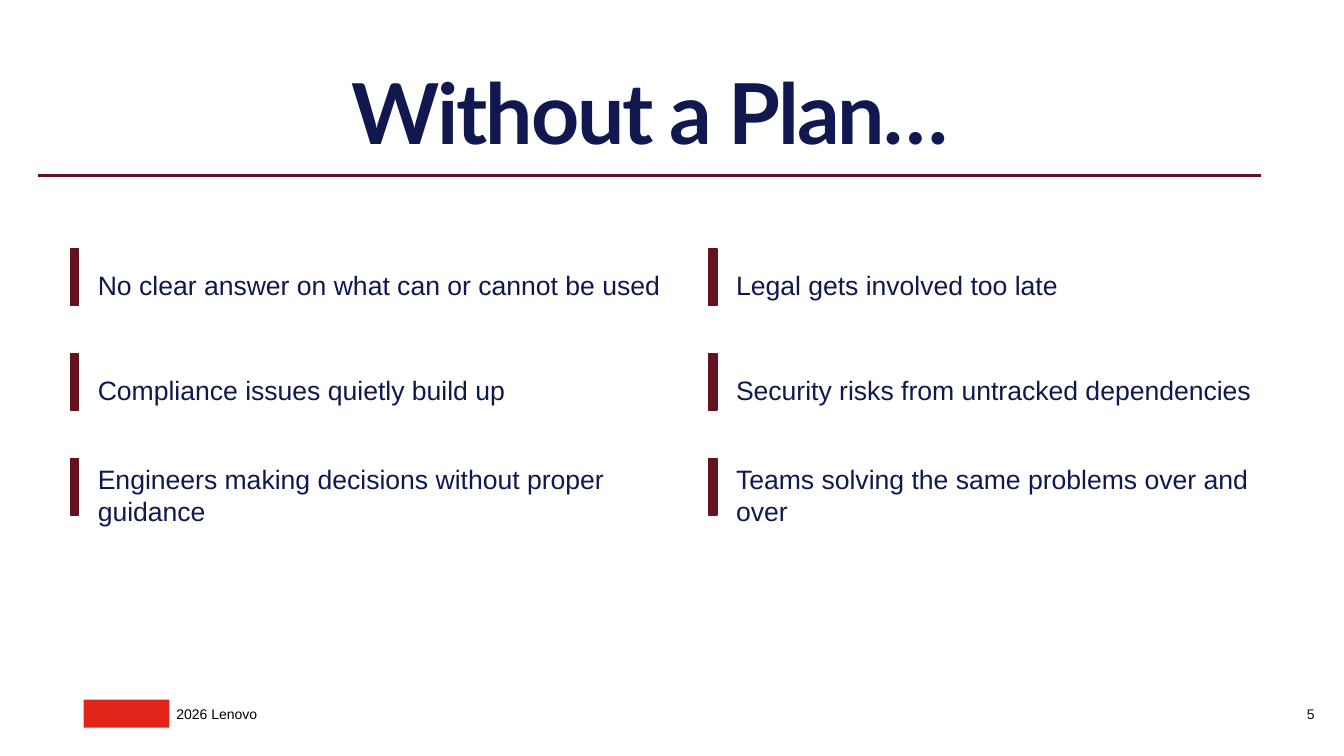
from pptx import Presentation
from pptx.dml.color import RGBColor
from pptx.enum.shapes import MSO_CONNECTOR, MSO_SHAPE
from pptx.enum.text import MSO_ANCHOR, MSO_AUTO_SIZE, PP_ALIGN
from pptx.oxml.ns import qn
from pptx.util import Inches, Pt
from lxml import etree

RECTANGLE = MSO_SHAPE.RECTANGLE
STRAIGHT = MSO_CONNECTOR.STRAIGHT
TOP, MIDDLE, BOTTOM = MSO_ANCHOR.TOP, MSO_ANCHOR.MIDDLE, MSO_ANCHOR.BOTTOM
LEFT, CENTER = PP_ALIGN.LEFT, PP_ALIGN.CENTER
NO_AUTOSIZE = MSO_AUTO_SIZE.NONE

NAVY = RGBColor(0x11, 0x18, 0x4F)
MAROON = RGBColor(0x64, 0x13, 0x1E)
RED = RGBColor(0xE1, 0x25, 0x1B)
BLACK = RGBColor(0x00, 0x00, 0x00)
NEAR_BLACK = RGBColor(0x0D, 0x0D, 0x0D)

TITLE_ONLY = 5
COLUMN_LEFTS = (0.7, 7.03)
FIRST_ROW_TOP, ROW_STEP = 2.47, 1.04
RISKS = (
    (
        "No clear answer on what can or cannot be used",
        "Compliance issues quietly build up",
        "Engineers making decisions without proper guidance",
    ),
    (
        "Legal gets involved too late",
        "Security risks from untracked dependencies",
        "Teams solving the same problems over and over",
    ),
)


class SlideBuilder:
    """Holds the text style and the slide being built."""

    frame_format = {
        "margin_left": 0, "margin_top": 0, "margin_right": 0,
        "margin_bottom": 0, "word_wrap": True, "auto_size": NO_AUTOSIZE,
    }
    body_font = {"name": "Arial", "size": Pt(19), "color": NAVY}
    small_font = {"name": "Arial", "size": Pt(10), "color": BLACK}
    title_font = {"name": "Lato", "size": Pt(60), "bold": True, "color": NAVY}

    def __init__(self, slide):
        self.slide = slide

    def fill_text(self, shape, text, font, anchor, alignment):
        frame = shape.text_frame
        for name, value in self.frame_format.items():
            setattr(frame, name, value)
        frame.vertical_anchor = anchor
        paragraph = frame.paragraphs[0]
        paragraph.alignment = alignment
        run = paragraph.add_run()
        run.text = text
        for name, value in font.items():
            if name == "color":
                run.font.color.rgb = value
            else:
                setattr(run.font, name, value)
        return paragraph

    def title(self, text, left, top, width, height):
        shape = self.slide.shapes.title
        box = {"left": left, "top": top, "width": width, "height": height}
        for name, value in box.items():
            setattr(shape, name, Inches(value))
        paragraph = self.fill_text(shape, text, self.title_font, BOTTOM, CENTER)
        paragraph.line_spacing = 0.75
        # Letter spacing in hundredths of a point
        paragraph.runs[0].font._element.set("spc", "-150")

    def text(self, text, left, top, width, height, font=None,
             anchor=MIDDLE, alignment=LEFT):
        shape = self.slide.shapes.add_textbox(
            Inches(left), Inches(top), Inches(width), Inches(height))
        self.fill_text(shape, text, font or self.body_font, anchor, alignment)

    def bar(self, left, top, width, height, color, outlined=True):
        shape = self.slide.shapes.add_shape(
            RECTANGLE, Inches(left), Inches(top), Inches(width), Inches(height))
        shape.shadow.inherit = False
        shape.fill.solid()
        shape.fill.fore_color.rgb = color
        if outlined:
            shape.line.color.rgb = color
            shape.line.width = Pt(1)
        else:
            shape.line.fill.background()

    def rule(self, left, right, top, color):
        connector = self.slide.shapes.add_connector(
            STRAIGHT, Inches(left), Inches(top), Inches(right), Inches(top))
        connector.line.color.rgb = color
        connector.line.width = Pt(2)
        etree.SubElement(connector._element.spPr, qn("a:effectLst"))

    def risk(self, text, left, top):
        self.bar(left, top, 0.08, 0.56, MAROON)
        self.text(text, left + 0.27, top - 0.16, 5.65, 1.04)


def main():
    presentation = Presentation()
    presentation.slide_width = Inches(13.33)
    presentation.slide_height = Inches(7.5)
    layout = presentation.slide_layouts[TITLE_ONLY]
    builder = SlideBuilder(presentation.slides.add_slide(layout))

    # Footer
    builder.text("2026 Lenovo", 1.75, 7, 4.5, 0.17, builder.small_font, TOP)
    builder.bar(0.83, 6.94, 0.85, 0.28, RED, outlined=False)
    builder.text("5", 12.76, 7, 0.48, 0.17,
                 {**builder.small_font, "color": NEAR_BLACK}, MIDDLE, CENTER)

    # Title and rule
    builder.title("Without a Plan…", 1.18, 0.46, 10.53, 1.12)
    builder.rule(0.38, 12.51, 1.74, MAROON)

    # Two columns of risks
    for left, column in zip(COLUMN_LEFTS, RISKS):
        for row, text in enumerate(column):
            builder.risk(text, left, FIRST_ROW_TOP + row * ROW_STEP)

    presentation.save("out.pptx")


if __name__ == "__main__":
    main()
